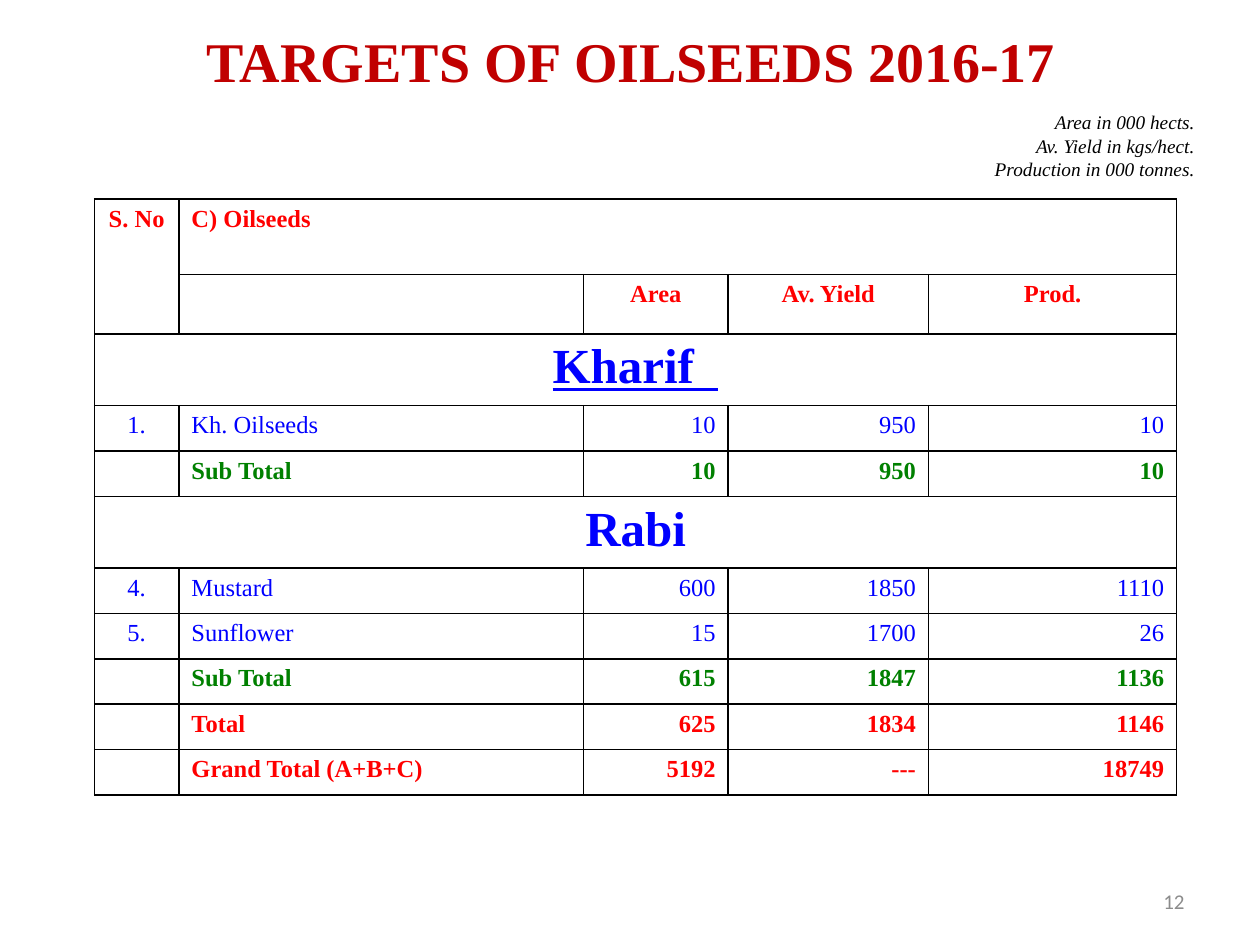
from lxml import etree
from pptx import Presentation
from pptx.dml.color import RGBColor
from pptx.enum.text import MSO_ANCHOR, PP_ALIGN
from pptx.oxml.ns import qn
from pptx.util import Inches, Pt

LEFT, CENTER, RIGHT = PP_ALIGN.LEFT, PP_ALIGN.CENTER, PP_ALIGN.RIGHT
TOP, MIDDLE = MSO_ANCHOR.TOP, MSO_ANCHOR.MIDDLE

BLACK = RGBColor(0x00, 0x00, 0x00)
WHITE = RGBColor(0xFF, 0xFF, 0xFF)
DARK_RED = RGBColor(0xC0, 0x00, 0x00)
RED = RGBColor(0xFF, 0x00, 0x00)
BLUE = RGBColor(0x00, 0x00, 0xFF)
GREEN = RGBColor(0x00, 0x80, 0x00)
GRAY = RGBColor(0x8C, 0x8C, 0x8C)
SERIF, SANS = "Times New Roman", "Calibri"


def write(frame, text, size, color, align, name=SERIF, bold=False, italic=False, underline=False):
    frame.text = text
    for paragraph in frame.paragraphs:
        paragraph.alignment = align
        font = paragraph.font
        font.name, font.size, font.color.rgb = name, Pt(size), color
        font.bold, font.italic, font.underline = bold, italic, underline


def add_text(box, anchor, *content, **style):
    frame = slide.shapes.add_textbox(*map(Inches, box)).text_frame
    frame.word_wrap = True
    frame.vertical_anchor = anchor
    write(frame, *content, **style)


presentation = Presentation()
presentation.slide_width, presentation.slide_height = Inches(10), Inches(7.5)
slide = presentation.slides.add_slide(presentation.slide_layouts[6])

# Title
add_text((1.02, 0.16, 8.09, 0.64), MIDDLE, "TARGETS OF OILSEEDS 2016-17 ", 32, DARK_RED, CENTER, bold=True)

# Targets table: each row has a style and its cell texts
COLUMN_WIDTHS = [0.67, 3.21, 1.15, 1.59, 1.97]
ROW_HEIGHTS = {"heading": 0.6, "columns": 0.47, "season": 0.57}
ITEM_HEIGHT = 0.36
ROWS = [
    ("heading", ["S. No", "C) Oilseeds"]),
    ("columns", ["", "", "Area", "Av. Yield", "Prod."]),
    ("season", ["Kharif  "]),
    ("crop", ["1.", "Kh. Oilseeds", "10", "950", "10"]),
    ("subtotal", ["", "Sub Total", "10", "950", "10"]),
    ("season", ["Rabi"]),
    ("crop", ["4.", "Mustard", "600", "1850", "1110"]),
    ("crop", ["5.", "Sunflower", "15", "1700", "26"]),
    ("subtotal", ["", "Sub Total", "615", "1847", "1136"]),
    ("total", ["", "Total", "625", "1834", "1146"]),
    ("total", ["", "Grand Total (A+B+C)", "5192", "---", "18749"]),
]
COLORS = {"season": BLUE, "crop": BLUE, "subtotal": GREEN}
ALIGNMENTS = [CENTER, LEFT, RIGHT, RIGHT, RIGHT]
FILLED_ROWS = (0, 1, 4)
UNDERLINED_ROW = 2

heights = [ROW_HEIGHTS.get(kind, ITEM_HEIGHT) for kind, _ in ROWS]
box = (0.75, 1.58, sum(COLUMN_WIDTHS), sum(heights))
table = slide.shapes.add_table(len(ROWS), len(COLUMN_WIDTHS), *map(Inches, box)).table
table.first_row = table.horz_banding = False
for column, width in zip(table.columns, COLUMN_WIDTHS):
    column.width = Inches(width)
for row, height in zip(table.rows, heights):
    row.height = Inches(height)

for row_index, (kind, texts) in enumerate(ROWS):
    for column_index, align in enumerate(ALIGNMENTS):
        cell = table.cell(row_index, column_index)
        text = texts[column_index] if column_index < len(texts) else ""
        write(
            cell.text_frame,
            text,
            28 if kind == "season" else 14,
            COLORS.get(kind, RED),
            CENTER if kind in ("columns", "season") else align,
            bold=kind != "crop",
            underline=row_index == UNDERLINED_ROW,
        )
        if not text:  # keeps empty cells from stretching their row
            cell.text_frame.paragraphs[0]._p.get_or_add_endParaRPr().set("sz", "1400")

        # Borders come before the fill
        properties = cell._tc.get_or_add_tcPr()
        for side in ("a:lnL", "a:lnR", "a:lnT", "a:lnB"):
            line = etree.SubElement(properties, qn(side), w=str(Pt(1)))
            line_fill = etree.SubElement(line, qn("a:solidFill"))
            etree.SubElement(line_fill, qn("a:srgbClr"), val=str(BLACK))
        if row_index in FILLED_ROWS:
            cell.fill.solid()
            cell.fill.fore_color.rgb = WHITE
        else:
            cell.fill.background()

# Merged cells
table.cell(0, 0).merge(table.cell(1, 0))
table.cell(0, 1).merge(table.cell(0, 4))
for row_index, (kind, _) in enumerate(ROWS):
    if kind == "season":
        table.cell(row_index, 0).merge(table.cell(row_index, 4))

# Units and page number
units = "Area in 000 hects.\vAv. Yield in kgs/hect.\nProduction in 000 tonnes."
add_text((5.75, 0.83, 3.83, 0.66), TOP, units, 11, BLACK, RIGHT, italic=True)
add_text((7.17, 6.95, 2.33, 0.4), MIDDLE, "12", 12, GRAY, RIGHT, name=SANS)

presentation.save("out.pptx")
